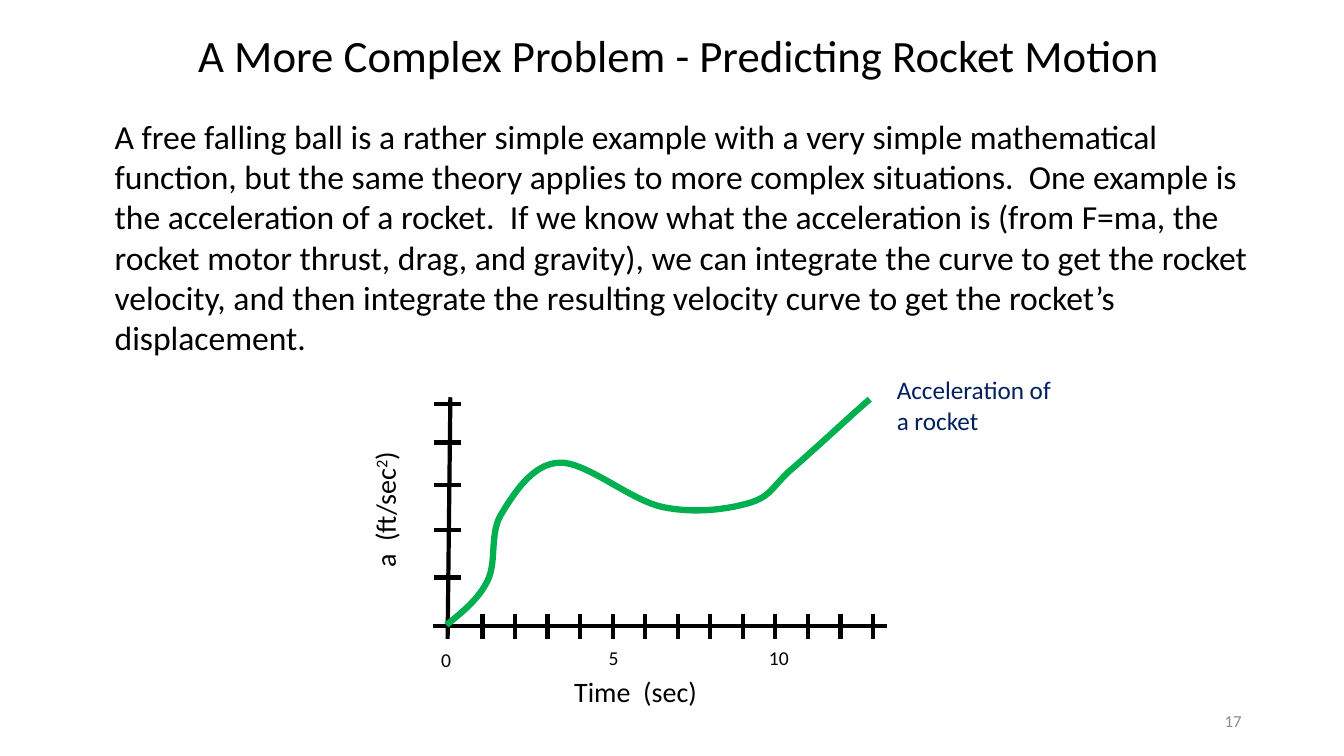
from pptx import Presentation
from pptx.dml.color import RGBColor
from pptx.enum.shapes import MSO_CONNECTOR
from pptx.enum.text import MSO_ANCHOR, MSO_AUTO_SIZE, PP_ALIGN
from pptx.oxml.ns import qn
from pptx.util import Cm, Pt
from lxml import etree

STRAIGHT = MSO_CONNECTOR.STRAIGHT
MIDDLE = MSO_ANCHOR.MIDDLE
GROW = MSO_AUTO_SIZE.SHAPE_TO_FIT_TEXT
LEFT, CENTER, RIGHT = PP_ALIGN.LEFT, PP_ALIGN.CENTER, PP_ALIGN.RIGHT

FONT = "Calibri"
BLACK, GRAY, NAVY, GREEN = "000000", "8C8C8C", "002060", "00B050"

TITLE = "A More Complex Problem - Predicting Rocket Motion"
BODY = (
    "A free falling ball is a rather simple example with a very simple "
    "mathematical function, but the same theory applies to more complex "
    "situations.  One example is the acceleration of a rocket.  If we know "
    "what the acceleration is (from F=ma, the rocket motor thrust, drag, and "
    "gravity), we can integrate the curve to get the rocket velocity, and "
    "then integrate the resulting velocity curve to get the rocket’s "
    "displacement."
)

# Curve: a start point, then two handles and an end point per piece
START = (0.33, 5.74)
PIECES = [
    ((0.74, 5.41), (1.15, 5.08), (1.37, 4.62)),
    ((1.6, 4.16), (1.42, 3.45), (1.7, 2.97)),
    ((2.01, 2.46), (2.49, 1.67), (3.18, 1.65)),
    ((3.86, 1.62), (4.98, 2.61), (5.79, 2.77)),
    ((6.61, 2.94), (7.44, 2.82), (7.98, 2.66)),
    ((8.54, 2.49), (8.56, 2.21), (9.07, 1.78)),
    ((9.58, 1.34), (10.67, 0.33), (11, 0.05)),
]
STEPS = 16


def color(code):
    return RGBColor.from_string(code)


def style(para, size, code):
    for run in para.runs:
        run.font.name = FONT
        run.font.size = Pt(size)
        run.font.color.rgb = color(code)


def label(shapes, box, text, size, code=BLACK, align=LEFT):
    item = shapes.add_textbox(*(Cm(v) for v in box))
    frame = item.text_frame
    frame.word_wrap = True
    frame.auto_size = GROW
    frame.text = text
    para = frame.paragraphs[0]
    para.alignment = align
    style(para, size, code)
    return item


def line(shapes, x1, y1, x2, y2):
    item = shapes.add_connector(STRAIGHT, Cm(x1), Cm(y1), Cm(x2), Cm(y2))
    item.line.color.rgb = color(BLACK)
    item.line.width = Pt(3)
    etree.SubElement(item._element.spPr, qn("a:effectLst"))


def bezier(p0, p1, p2, p3, t):
    u = 1 - t
    return tuple(
        u**3 * a + 3 * u * u * t * b + 3 * u * t * t * c + t**3 * d
        for a, b, c, d in zip(p0, p1, p2, p3)
    )


def axes(shapes, x, y):
    line(shapes, x, y + 5.76, x + 11.43, y + 5.76)
    line(shapes, x + 0.43, y, x + 0.36, y + 6.09)
    # Ticks: uneven on the upright axis, even along time
    for drop in (0.18, 1.14, 2.21, 3.35, 4.54):
        line(shapes, x + 0.03, y + drop, x + 0.69, y + drop)
    for i in range(13):
        tick = x + 1.24 + 0.82 * i
        line(shapes, tick, y + 5.45, tick, y + 6.1)


def names(shapes, x, y):
    for text, dx, dy in (("0", -0.05, 6.2), ("5", 4.17, 6.14), ("10", 8.21, 6.14)):
        label(shapes, (x + dx, y + dy, 1.68, 0.86), text, 14)
    label(shapes, (x + 3.3, y + 6.86, 4.5, 1.12), "Time  (sec)", 20)
    label(shapes, (x + 11.43, y - 0.69, 4.39, 1.8),
          "Acceleration of a rocket", 18, NAVY)
    # Upright axis name with a raised 2
    unit = label(shapes, (x - 4.01, y + 1.19, 5.59, 1.12), "a  (ft/sec", 20)
    unit.rotation = 270
    para = unit.text_frame.paragraphs[0]
    power = para.add_run()
    power.text = "2"
    para.add_run().text = ")"
    style(para, 20, BLACK)
    power._r.get_or_add_rPr().set("baseline", "30000")


def curve(shapes, x, y):
    points, last = [START], START
    for piece in PIECES:
        points += [bezier(last, *piece, i / STEPS) for i in range(1, STEPS + 1)]
        last = piece[-1]
    spots = [(Cm(x + px), Cm(y + py)) for px, py in points]
    pen = shapes.build_freeform(*spots[0])
    pen.add_line_segments(spots[1:], close=False)
    item = pen.convert_to_shape()
    item.shadow.inherit = False
    item.fill.background()
    item.line.color.rgb = color(GREEN)
    item.line.width = Pt(4.5)


def graph(slide, x, y):
    shapes = slide.shapes.add_group_shape().shapes
    axes(shapes, x, y)
    names(shapes, x, y)
    curve(shapes, x, y)


def header(slide, x, y, wide):
    label(slide.shapes, (x, y, wide, 1.63), TITLE, 32, align=CENTER)


def story(slide, x, y, wide):
    label(slide.shapes, (x, y, wide, 6.4), BODY, 24)


def footer(slide, x, y, wide):
    item = label(slide.shapes, (x, y, wide, 1.01), "17", 12, GRAY, RIGHT)
    item.text_frame.auto_size = MSO_AUTO_SIZE.NONE
    item.text_frame.vertical_anchor = MIDDLE


def main():
    deck = Presentation()
    deck.slide_width, deck.slide_height = Cm(33.87), Cm(19.05)
    slide = deck.slides.add_slide(deck.slide_layouts[6])
    footer(slide, 23.92, 17.66, 7.62)
    graph(slide, 10.92, 10.01)
    header(slide, 4.09, 0.58, 26.04)
    story(slide, 2.64, 2.79, 29.59)
    deck.save("out.pptx")


if __name__ == "__main__":
    main()
